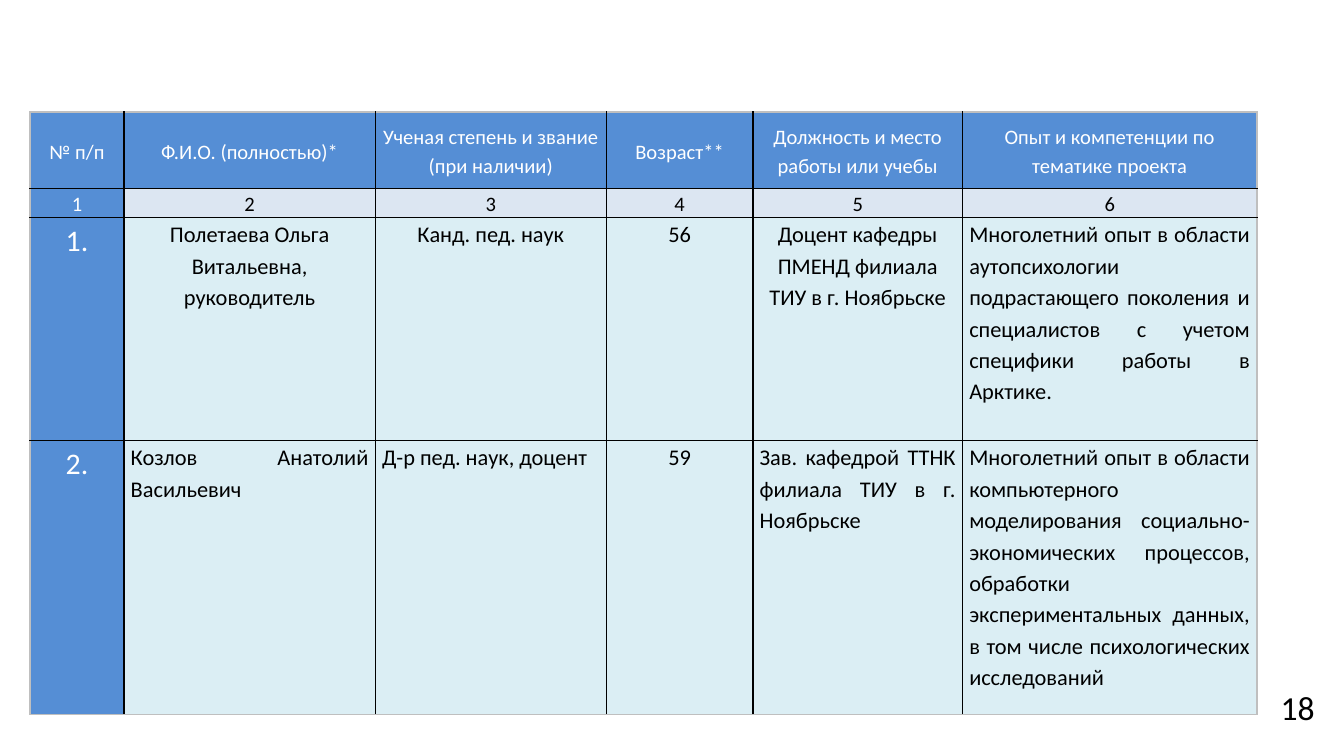
import dataclasses

import lxml.etree
import pptx
import pptx.dml.color
import pptx.enum.text
import pptx.oxml.ns
import pptx.util

ALIGN = pptx.enum.text.PP_ALIGN
ANCHOR = pptx.enum.text.MSO_ANCHOR
SLIDE_WIDTH = pptx.util.Inches(10)
SLIDE_HEIGHT = SLIDE_WIDTH * 9 // 16
COLUMN_WEIGHTS = (0.7, 1.87, 1.72, 1.09, 1.56, 2.19)
ROW_WEIGHTS = (0.57, 0.21, 1.66, 2.04)
TABLE_SHARES = (2.23, 14.8, 91.3, 79.6)
NUMBER_SHARES = (94.3, 90, 4.6, 7.11)

MEMBERS = (
    ("№ п/п", "Ф.И.О. (полностью)*", "Ученая степень и звание (при наличии)",
     "Возраст**", "Должность и место работы или учебы",
     "Опыт и компетенции по тематике проекта"),
    ("1", "2", "3", "4", "5", "6"),
    ("1.", "Полетаева Ольга Витальевна,\nруководитель", "Канд. пед. наук", "56",
     "Доцент кафедры ПМЕНД филиала ТИУ в г. Ноябрьске",
     "Многолетний опыт в области аутопсихологии подрастающего поколения и "
     "специалистов с учетом специфики работы в Арктике."),
    ("2.", "Козлов Анатолий Васильевич", "Д-р пед. наук, доцент", "59",
     "Зав. кафедрой ТТНК филиала ТИУ в г. Ноябрьске",
     "Многолетний опыт в области компьютерного моделирования "
     "социально-экономических процессов, обработки экспериментальных данных, "
     "в том числе психологических исследований"),
)
JUSTIFIED = {(2, 5), (3, 1), (3, 2), (3, 4), (3, 5)}


@dataclasses.dataclass(frozen=True)
class Theme:
    """Hold the colours and type sizes of the slide."""
    font: str = "Calibri"
    accent: str = "558ED5"
    numbering: str = "DCE6F2"
    body: str = "DBEEF4"
    light: str = "FFFFFF"
    dark: str = "000000"
    frame: str = "BFBFBF"
    heading_size: int = 11
    body_size: int = 12
    index_size: int = 16
    page_size: int = 18


THEME = Theme()


def rgb(value):
    """Return a colour object for a hex string."""
    return pptx.dml.color.RGBColor.from_string(value)


def apply(target, values):
    """Set every attribute named in a dict of format values."""
    for name, value in values.items():
        setattr(target, name, value)


def share_box(deck, shares):
    """Turn percentages of the slide into left, top, width and height."""
    sides = (deck.slide_width, deck.slide_height) * 2
    return [round(side * share / 100) for side, share in zip(sides, shares)]


def write(frame, text, size, color, para_format):
    """Fill a text frame with one paragraph per line of text."""
    for index, line in enumerate(text.split("\n")):
        para = frame.add_paragraph() if index else frame.paragraphs[0]
        apply(para, para_format)
        span = para.add_run()
        span.text = line
        apply(span.font, {"name": THEME.font, "size": pptx.util.Pt(size)})
        span.font.color.rgb = rgb(color)


def draw_borders(cell, row, column):
    """Draw black inner rules and a grey outer frame around a cell."""
    outer = {"lnL": column == 0, "lnR": column == len(COLUMN_WEIGHTS) - 1,
             "lnT": row == 0, "lnB": row == len(ROW_WEIGHTS) - 1}
    props = cell._tc.get_or_add_tcPr()
    qn = pptx.oxml.ns.qn
    for tag, is_outer in outer.items():
        line = lxml.etree.SubElement(props, qn(f"a:{tag}"), w=str(pptx.util.Pt(1)))
        fill = lxml.etree.SubElement(line, qn("a:solidFill"))
        color = THEME.frame if is_outer else THEME.dark
        lxml.etree.SubElement(fill, qn("a:srgbClr"), val=color)


def cell_look(row, column):
    """Return the fill, text colour and text size of a cell."""
    size = THEME.heading_size if row < 2 else THEME.body_size
    if row == 0 or column == 0:
        return THEME.accent, THEME.light, THEME.index_size if row > 1 else size
    return THEME.numbering if row == 1 else THEME.body, THEME.dark, size


def add_members_table(page, box):
    """Place the table of project members in the given box."""
    table = page.shapes.add_table(len(ROW_WEIGHTS), len(COLUMN_WEIGHTS), *box).table
    apply(table, {"first_row": False, "horz_banding": False})
    for column, weight in zip(table.columns, COLUMN_WEIGHTS):
        column.width = round(box[2] * weight / sum(COLUMN_WEIGHTS))
    for row, weight in zip(table.rows, ROW_WEIGHTS):
        row.height = round(box[3] * weight / sum(ROW_WEIGHTS))
    margin = pptx.util.Inches(0.05)
    for row, texts in enumerate(MEMBERS):
        for column, text in enumerate(texts):
            cell = table.cell(row, column)
            fill, color, size = cell_look(row, column)
            apply(cell, {"margin_left": margin, "margin_right": margin,
                         "margin_top": 0, "margin_bottom": 0,
                         "vertical_anchor": ANCHOR.TOP if row else ANCHOR.MIDDLE})
            draw_borders(cell, row, column)
            cell.fill.solid()
            cell.fill.fore_color.rgb = rgb(fill)
            justified = (row, column) in JUSTIFIED
            write(cell.text_frame, text, size, color,
                  {"alignment": ALIGN.JUSTIFY if justified else ALIGN.CENTER,
                   "line_spacing": 1.15})


def add_page_number(page, box):
    """Place the page number in the given box."""
    frame = page.shapes.add_textbox(*box).text_frame
    apply(frame, {"word_wrap": False,
                  "auto_size": pptx.enum.text.MSO_AUTO_SIZE.SHAPE_TO_FIT_TEXT})
    write(frame, "18", THEME.page_size, THEME.dark, {"alignment": ALIGN.LEFT})


def main():
    """Build the deck and save it."""
    deck = pptx.Presentation()
    apply(deck, {"slide_width": SLIDE_WIDTH, "slide_height": SLIDE_HEIGHT})
    page = deck.slides.add_slide(deck.slide_layouts[6])
    add_members_table(page, share_box(deck, TABLE_SHARES))
    add_page_number(page, share_box(deck, NUMBER_SHARES))
    deck.save("out.pptx")


if __name__ == "__main__":
    main()
